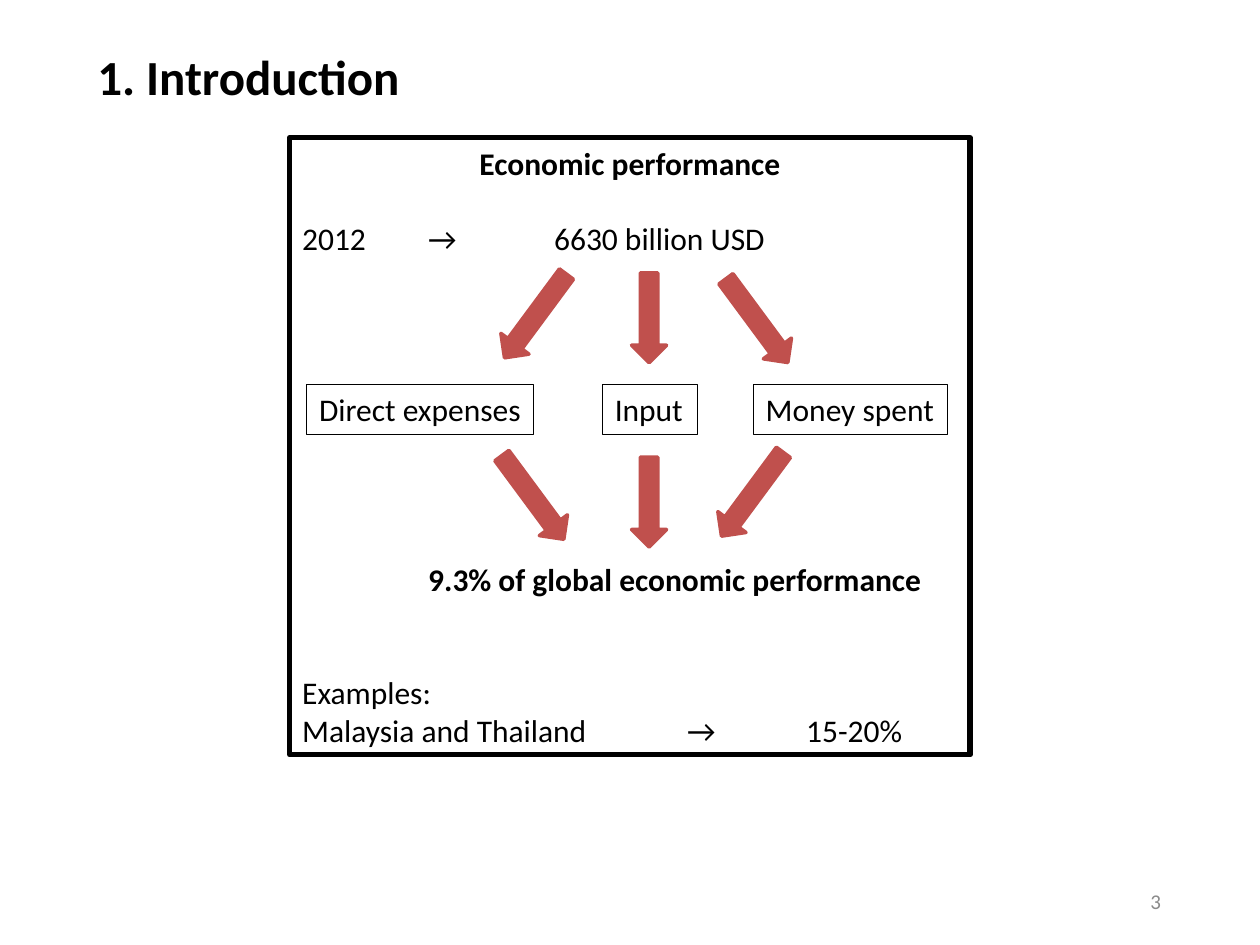
"""Build the introduction slide on economic performance."""
from lxml import etree
from pptx import Presentation
from pptx.dml.color import RGBColor
from pptx.enum import shapes, text
from pptx.oxml import ns
from pptx.util import Pt

COLORS = {"ink": "000000", "arrow": "C0504D", "number": "8B8B8B"}
LINE_HEIGHT = 21.6


def add_box(left, top, width, height, border=0, wrap=True):
    box = slide.shapes.add_textbox(Pt(left), Pt(top), Pt(width), Pt(height))
    box.text_frame.word_wrap = wrap
    if border:
        box.line.color.rgb = RGBColor.from_string(COLORS["ink"])
        box.line.width = Pt(border)
    return box.text_frame


def add_run(paragraph, words, size=18, bold=False, color="ink"):
    run = paragraph.add_run()
    run.text = words
    run.font.name = "Calibri"
    run.font.size = Pt(size)
    run.font.bold = bold
    run.font.color.rgb = RGBColor.from_string(COLORS[color])


deck = Presentation()
deck.slide_width, deck.slide_height = Pt(720), Pt(540)
slide = deck.slides.add_slide(deck.slide_layouts[6])

number = add_box(508.5, 500.5, 162, 28.75)
number.vertical_anchor = text.MSO_ANCHOR.MIDDLE
number.paragraphs[0].alignment = text.PP_ALIGN.RIGHT
add_run(number.paragraphs[0], "3", 12, color="number")

title = add_box(48.5, 23, 187, 41, wrap=False)
add_run(title.paragraphs[0], "1. Introduction", 28, bold=True)

summary = add_box(165.6, 78.6, 388.8, 352.8, border=3)
heading = summary.paragraphs[0]
heading.alignment = text.PP_ALIGN.CENTER
add_run(heading, "Economic performance", bold=True)

for words, bold, lines_before in [
    ("2012\t→ \t6630 billion USD", False, 1),
    ("\t9.3% of global economic performance", True, 8),
    ("Examples:", False, 2),
    ("Malaysia and Thailand\t →\t15-20%", False, 0),
]:
    statement = summary.add_paragraph()
    statement.space_before = Pt(lines_before * LINE_HEIGHT)
    stops = etree.SubElement(statement._p.get_or_add_pPr(), ns.qn("a:tabLst"))
    for inch in range(1, 5):
        etree.SubElement(stops, ns.qn("a:tab"), pos=str(Pt(72 * inch)), algn="l")
    add_run(statement, words, bold=bold)

for words, left, width, wrap in [
    ("Direct expenses", 175.3, 129.6, False),
    ("Input", 344.2, 54.4, True),
    ("Money spent", 430.5, 111, False),
]:
    share = add_box(left, 219.6, width, 28.8, border=0.75, wrap=wrap)
    add_run(share.paragraphs[0], words)

TILT = 36.5
for left, top, height, angle in [
    (360.9, 156, 51.3, 0),
    (422.5, 153.5, 59.5, -TILT),
    (296, 150.8, 59.5, TILT),
    (360.9, 261.3, 51.3, 0),
    (294.5, 254.5, 59.5, -TILT),
    (420, 252.7, 59.5, TILT),
]:
    flow = slide.shapes.add_shape(
        shapes.MSO_SHAPE.DOWN_ARROW, Pt(left), Pt(top), Pt(20), Pt(height))
    flow.rotation = angle
    flow.shadow.inherit = False
    flow.fill.solid()
    flow.fill.fore_color.rgb = RGBColor.from_string(COLORS["arrow"])
    flow.line.color.rgb = RGBColor.from_string(COLORS["arrow"])
    flow.line.width = Pt(2)

deck.save("out.pptx")
